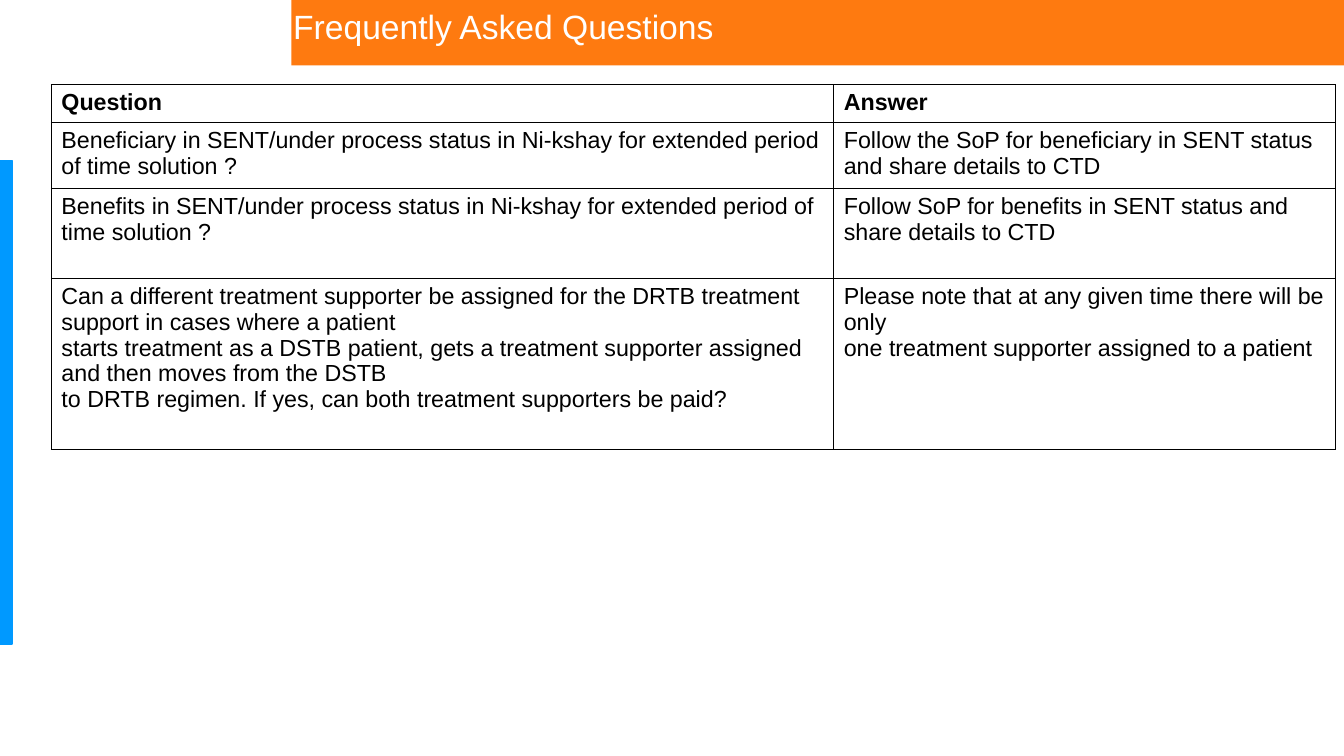
from lxml.etree import SubElement
from pptx import Presentation
from pptx.dml.color import RGBColor
from pptx.enum.shapes import MSO_SHAPE as Shape
from pptx.enum.text import PP_ALIGN as Align
from pptx.oxml.ns import qn
from pptx.util import Inches, Pt

TITLE = "Frequently Asked Questions"
FAQ = [
    ("Question", "Answer"),
    ("Beneficiary in SENT/under process status in Ni-kshay for extended period of time solution ?",
     "Follow the SoP for beneficiary in SENT status and share details to CTD"),
    ("Benefits in SENT/under process status in Ni-kshay for extended period of time solution ?",
     "Follow SoP for benefits in SENT status and share details to CTD"),
    ("Can a different treatment supporter be assigned for the DRTB treatment support in cases where a patient\n"
     "starts treatment as a DSTB patient, gets a treatment supporter assigned and then moves from the DSTB\n"
     "to DRTB regimen. If yes, can both treatment supporters be paid?",
     "Please note that at any given time there will be only\n"
     "one treatment supporter assigned to a patient"),
]
COLUMN_WIDTHS = (7.76, 4.98)
ROW_HEIGHTS = (0.36, 0.63, 0.89, 1.7)

ORANGE = RGBColor(0xFE, 0x7A, 0x10)
BLUE = RGBColor(0x00, 0x99, 0xFF)
WHITE = RGBColor(0xFF, 0xFF, 0xFF)
BLACK = RGBColor(0x00, 0x00, 0x00)


def write(frame, text, size, color, bold=False):
    frame.word_wrap = True
    paragraph = frame.paragraphs[0]
    paragraph.alignment = Align.LEFT
    paragraph.text = text
    for run in paragraph.runs:
        run.font.name = "Arial"
        run.font.size = Pt(size)
        run.font.bold = bold
        run.font.color.rgb = color
    for line_break in paragraph._p.findall(qn("a:br")):
        SubElement(line_break, qn("a:rPr"), sz=str(round(size * 100)))


def add_bar(slide, color, *box):
    bar = slide.shapes.add_shape(Shape.RECTANGLE, *map(Inches, box))
    bar.shadow.inherit = False
    bar.fill.solid()
    bar.fill.fore_color.rgb = color
    bar.line.fill.background()
    return bar


def add_borders(cell):
    properties = cell._tc.get_or_add_tcPr()
    for position, side in enumerate(("lnL", "lnR", "lnT", "lnB")):
        border = SubElement(properties, qn(f"a:{side}"), w=str(Pt(1)))
        fill = SubElement(border, qn("a:solidFill"))
        SubElement(fill, qn("a:srgbClr"), val=str(BLACK))
        properties.insert(position, border)


def main():
    deck = Presentation()
    deck.slide_width, deck.slide_height = Inches(13.33), Inches(7.5)
    slide = deck.slides.add_slide(deck.slide_layouts[6])

    add_bar(slide, ORANGE, 2.89, 0, 10.47, 0.65)
    accent = add_bar(slide, BLUE, 0, 1.59, 0.12, 4.8)
    accent.line.color.rgb = BLUE
    accent.line.width = Pt(0.85)

    title = slide.shapes.add_textbox(*map(Inches, (2.81, 0.01, 10.52, 0.82)))
    write(title.text_frame, TITLE, 24, WHITE)

    table_box = map(Inches, (0.51, 0.84, sum(COLUMN_WIDTHS), sum(ROW_HEIGHTS)))
    faq_table = slide.shapes.add_table(len(FAQ), len(COLUMN_WIDTHS), *table_box).table
    faq_table.horz_banding = False
    for column, width in zip(faq_table.columns, COLUMN_WIDTHS):
        column.width = Inches(width)
    for index, (row, height) in enumerate(zip(faq_table.rows, ROW_HEIGHTS)):
        row.height = Inches(height)
        for cell, text in zip(row.cells, FAQ[index]):
            write(cell.text_frame, text, 16.6, BLACK, bold=index == 0)
            cell.fill.solid()
            cell.fill.fore_color.rgb = WHITE
            add_borders(cell)

    deck.save("out.pptx")


if __name__ == "__main__":
    main()
